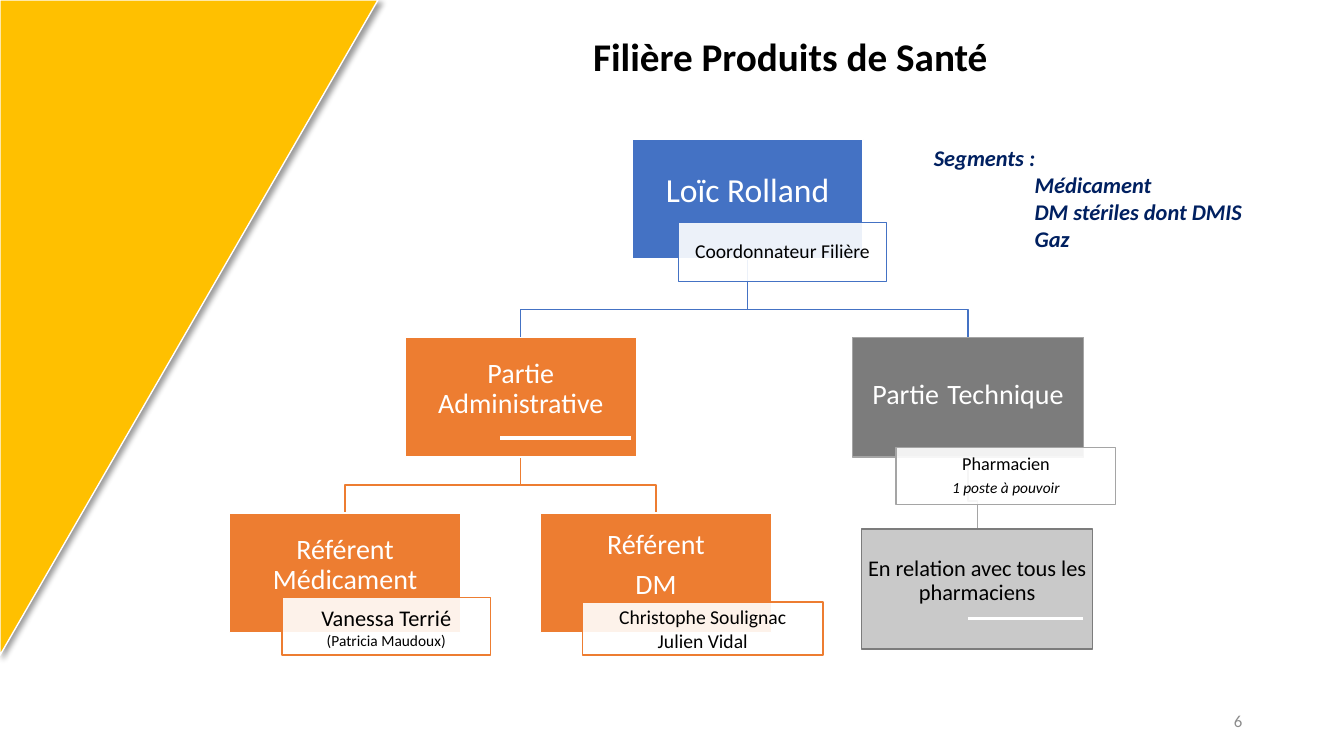
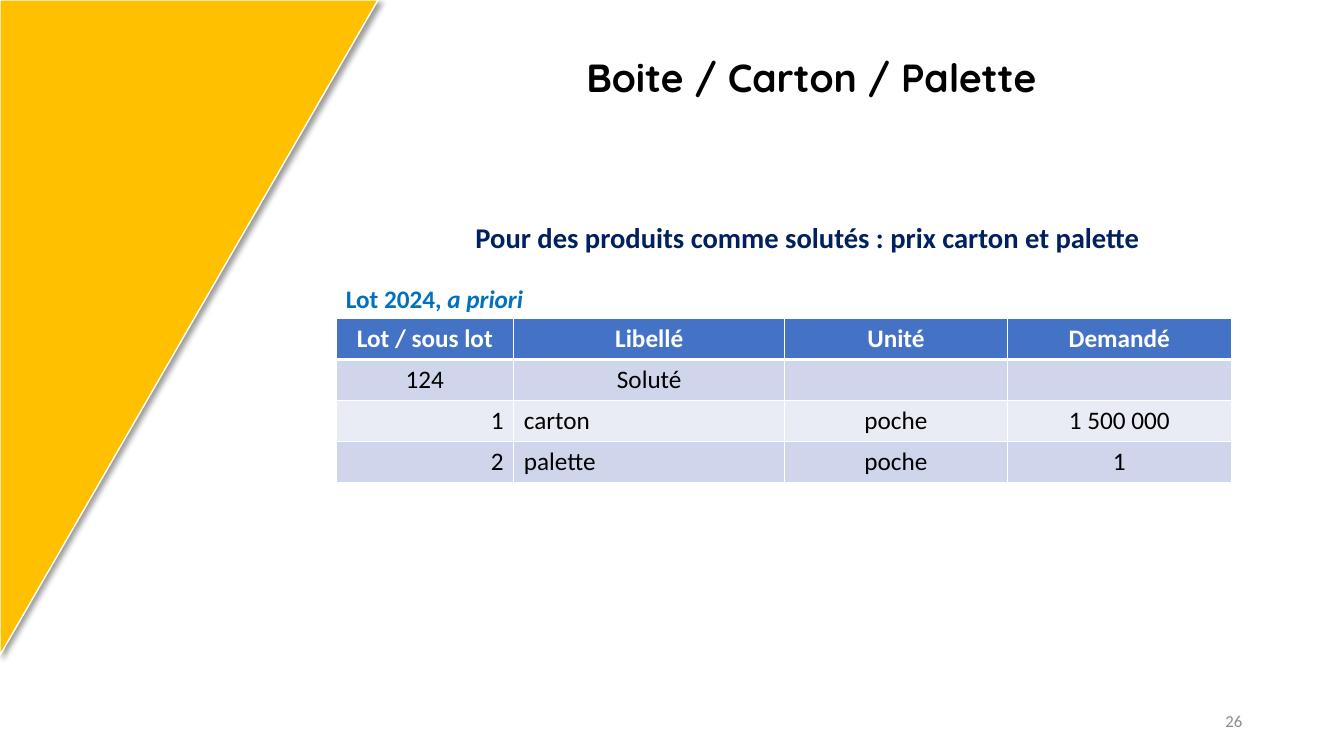
from pptx import Presentation
from pptx.dml.color import RGBColor
from pptx.enum import shapes, text
from pptx.oxml import parse_xml
from pptx.oxml.ns import nsdecls, qn
from pptx.util import Pt
from lxml import etree

C = {
    "yellow": "FFC000", "white": "FFFFFF", "black": "000000", "navy": "002060",
    "blue": "4472C4", "orange": "ED7D31", "grey": "7C7C7C", "mid": "A5A5A5",
    "light": "C9C9C9", "number": "8C8C8C", "sky": "0070C0",
    "band1": "CFD5EA", "band2": "E9EBF5",
}
BOX_W, BOX_H, BEND = 165, 85.5, 20
SMALL = {"size": 11}
TAG = {"spacing": 0.9, "gap": 4.5}

CHART_TITLE = "Filière Produits de Santé"
BOXES = {
    "head": {"at": (451.5, 99.5), "fill": "blue", "line": "white",
             "text": ["Loïc Rolland"], "fmt": {"size": 24},
             "tag": (484.5, 159, 149, 42), "edge": "blue",
             "tag_text": ["Coordonnateur Filière"], "tag_fmt": {"size": 14, **TAG}},
    "admin": {"at": (289.5, 241), "fill": "orange", "line": "white",
              "text": ["Partie Administrative"], "fmt": {},
              "tag": (356.5, 311, 94.5, 4), "edge": "orange"},
    "technique": {"at": (609, 241), "fill": "grey", "line": "mid",
                  "text": [["Partie", (" ", {"size": 26}), "Technique"]],
                  "fmt": {"spacing": 1},
                  "tag": (640, 319.5, 157, 41), "edge": "mid",
                  "tag_text": ["Pharmacien",
                               [("1 poste à pouvoir", {"size": 11, "italic": True})]],
                  "tag_fmt": {"size": 13, **TAG}},
    "medicament": {"at": (164, 366.5), "fill": "orange", "line": "white",
                   "text": ["Référent Médicament"], "fmt": {},
                   "tag": (201.5, 427, 149, 41), "edge": "orange",
                   "tag_text": ["Vanessa Terrié", [("(Patricia Maudoux)", SMALL)]],
                   "tag_fmt": {"size": 16}},
    "dm": {"at": (386, 366.5), "fill": "orange", "line": "white",
           "text": ["Référent", "DM"], "fmt": {},
           "tag": (416, 430, 172, 38), "edge": "orange",
           "tag_text": ["Christophe Soulignac", "Julien Vidal"],
           "tag_fmt": {"size": 14}},
    "relation": {"at": (615.5, 378), "fill": "light", "line": "grey",
                 "text": ["En relation avec tous les pharmaciens"],
                 "fmt": {"size": 16, "color": "black"},
                 "tag": (691, 440, 83, 3.5), "edge": "light"},
}
LINKS = [
    ("technique", "relation", "mid"),
    ("head", "technique", "blue"),
    ("admin", "dm", "orange"),
    ("admin", "medicament", "orange"),
    ("head", "admin", "blue"),
]
SEGMENTS = ["Segments :", "Médicament", "DM stériles dont DMIS", "Gaz"]

TABLE_TITLE = "Boite / Carton / Palette"
MESSAGE = "Pour des produits comme solutés : prix carton et palette"
CAPTION = [["Lot 2024, ", ("a priori", {"italic": True})]]
COLS = [127, 193.5, 159, 160]
ROW_H = 29.25
ROWS = [
    ("Lot / sous lot", "Libellé", "Unité", "Demandé"),
    ("124", "Soluté", "", ""),
    ("1", "carton", "poche", "1 500 000"),
    ("2", "palette", "poche", "1"),
]
ROW_FILLS = ["blue", "band1", "band2", "band1"]
ROW_ALIGNS = ["cccc", "cccc", "rlcc", "rlcc"]

ALIGN = {"l": text.PP_ALIGN.LEFT, "c": text.PP_ALIGN.CENTER, "r": text.PP_ALIGN.RIGHT}
ANCHOR = {"t": text.MSO_ANCHOR.TOP, "m": text.MSO_ANCHOR.MIDDLE, "b": text.MSO_ANCHOR.BOTTOM}


def rgb(name):
    return RGBColor.from_string(C[name])


def write(tf, paras, size=18, color="black", font="Calibri", bold=False, italic=False,
          align="l", anchor="t", spacing=1, gap=0, margins=(7.2, 3.6, 7.2, 3.6)):
    tf.word_wrap = True
    tf.vertical_anchor = ANCHOR[anchor]
    tf.margin_left, tf.margin_top, tf.margin_right, tf.margin_bottom = map(Pt, margins)
    for i, para in enumerate(paras):
        p = tf.paragraphs[0] if i == 0 else tf.add_paragraph()
        p.alignment = ALIGN[align]
        p.line_spacing = spacing
        p.space_before = Pt(0)
        p.space_after = Pt(gap if i < len(paras) - 1 else 0)
        for run in [para] if isinstance(para, str) else para:
            words, own = (run, {}) if isinstance(run, str) else run
            r = p.add_run()
            r.text = words
            r.font.name = font
            r.font.size = Pt(own.get("size", size))
            r.font.bold = bold
            r.font.italic = own.get("italic", italic)
            r.font.color.rgb = rgb(color)


def place(sp, x, y, w, h):
    sp.left, sp.top, sp.width, sp.height = Pt(x), Pt(y), Pt(w), Pt(h)


def add_text(s, at, paras, **fmt):
    tf = s.shapes.add_textbox(*map(Pt, at)).text_frame
    write(tf, paras, **fmt)
    return tf


def fill_placeholder(sp, at, words, **fmt):
    place(sp, *at)
    sp.text_frame.auto_size = text.MSO_AUTO_SIZE.NONE
    write(sp.text_frame, [words], bold=True, align="c", **fmt)


def add_rect(s, at, fill, line, kind=shapes.MSO_SHAPE.RECTANGLE):
    sp = s.shapes.add_shape(kind, *map(Pt, at))
    sp.shadow.inherit = False
    sp.fill.solid()
    sp.fill.fore_color.rgb = rgb(fill)
    sp.line.color.rgb = rgb(line)
    sp.line.width = Pt(1)
    return sp


def add_triangle(prs, s):
    sp = add_rect(s, (-99, 99, 468, 270), "yellow", "white", shapes.MSO_SHAPE.RIGHT_TRIANGLE)
    sp.rotation = 90
    effects = sp._element.spPr.find(qn("a:effectLst"))
    effects.append(parse_xml(
        f'<a:outerShdw {nsdecls("a")} blurRad="{Pt(4)}" dist="{Pt(3)}" dir="2700000" '
        f'algn="tl" rotWithShape="0"><a:srgbClr val="{C["black"]}">'
        '<a:alpha val="40000"/></a:srgbClr></a:outerShdw>'))
    prs.slide_master.shapes._spTree.insert(2, sp._element)


def add_link(s, parent, child, color):
    (px, py), (cx, cy) = BOXES[parent]["at"], BOXES[child]["at"]
    x1, y1, x2 = px + BOX_W / 2, py + BOX_H, cx + BOX_W / 2
    points = [(x1, cy - BEND), (x2, cy - BEND), (x2, cy)]
    fb = s.shapes.build_freeform(Pt(x1), Pt(y1))
    fb.add_line_segments([(Pt(x), Pt(y)) for x, y in points], close=False)
    sp = fb.convert_to_shape()
    sp.shadow.inherit = False
    sp.fill.background()
    sp.line.color.rgb = rgb(color)
    sp.line.width = Pt(1)


def add_box(s, box):
    sp = add_rect(s, (*box["at"], BOX_W, BOX_H), box["fill"], box["line"])
    fmt = {"size": 20, "color": "white", "spacing": 0.9, "gap": 7, **box["fmt"]}
    write(sp.text_frame, box["text"], align="c", anchor="m", margins=(1, 1, 1, 12), **fmt)
    tag = add_rect(s, box["tag"], "white", box["edge"])
    if "tag_text" in box:
        clr = tag._element.spPr.find(qn("a:solidFill")).find(qn("a:srgbClr"))
        etree.SubElement(clr, qn("a:alpha")).set("val", "90000")
        write(tag.text_frame, box["tag_text"], align="c", anchor="m",
              margins=(3, 1, 3, 1), **box["tag_fmt"])


def add_borders(cell, row):
    tc_pr = cell._tc.get_or_add_tcPr()
    widths = {"L": 1, "R": 1, "T": 3 if row == 1 else 1, "B": 3 if row == 0 else 1}
    for side, width in widths.items():
        tc_pr.append(parse_xml(
            f'<a:ln{side} {nsdecls("a")} w="{Pt(width)}"><a:solidFill>'
            f'<a:srgbClr val="{C["white"]}"/></a:solidFill></a:ln{side}>'))


def add_lots(s):
    frame = s.shapes.add_table(len(ROWS), len(COLS), Pt(240), Pt(227.5),
                               Pt(sum(COLS)), Pt(ROW_H * len(ROWS)))
    table = frame.table
    table.horz_banding = False
    for col, width in zip(table.columns, COLS):
        col.width = Pt(width)
    for i, row in enumerate(ROWS):
        table.rows[i].height = Pt(ROW_H)
        for j, words in enumerate(row):
            cell = table.cell(i, j)
            add_borders(cell, i)
            cell.fill.solid()
            cell.fill.fore_color.rgb = rgb(ROW_FILLS[i])
            write(cell.text_frame, [words], bold=i == 0, align=ROW_ALIGNS[i][j],
                  color="white" if i == 0 else "black")


def add_number(s, number):
    add_text(s, (678.5, 500.5, 216, 29), [number], size=12, color="number",
             align="r", anchor="m")


def build_chart_slide(prs):
    s = prs.slides.add_slide(prs.slide_layouts[5])
    add_triangle(prs, s)
    fill_placeholder(s.shapes.title, (330.5, 18.5, 468, 42.5), CHART_TITLE,
                     size=28, anchor="b", spacing=0.9)
    for link in LINKS:
        add_link(s, *link)
    for box in BOXES.values():
        add_box(s, box)
    tf = add_text(s, (660, 99.5, 250, 85), SEGMENTS, size=16, color="navy",
                  bold=True, italic=True)
    for p in tf.paragraphs[1:]:
        p._p.get_or_add_pPr().set("marL", str(Pt(72)))
    add_number(s, "6")


def build_table_slide(prs):
    s = prs.slides.add_slide(prs.slide_layouts[1])
    fill_placeholder(s.shapes.title, (233.5, 37.5, 692, 38), TABLE_TITLE,
                     size=28, font="Quicksand", anchor="b", spacing=0.9)
    body = s.placeholders[1]
    p_pr = body.text_frame.paragraphs[0]._p.get_or_add_pPr()
    p_pr.set("marL", "0")
    p_pr.set("indent", "0")
    etree.SubElement(p_pr, qn("a:buNone"))
    fill_placeholder(body, (248, 160, 657.5, 36), MESSAGE,
                     size=20.4, color="navy", spacing=0.7)
    add_lots(s)
    add_text(s, (240, 198.5, 281.5, 29), CAPTION, color="sky", bold=True)
    add_number(s, "26")


def main():
    prs = Presentation()
    prs.slide_width, prs.slide_height = Pt(960), Pt(540)
    build_chart_slide(prs)
    build_table_slide(prs)
    prs.save("out.pptx")


if __name__ == "__main__":
    main()
